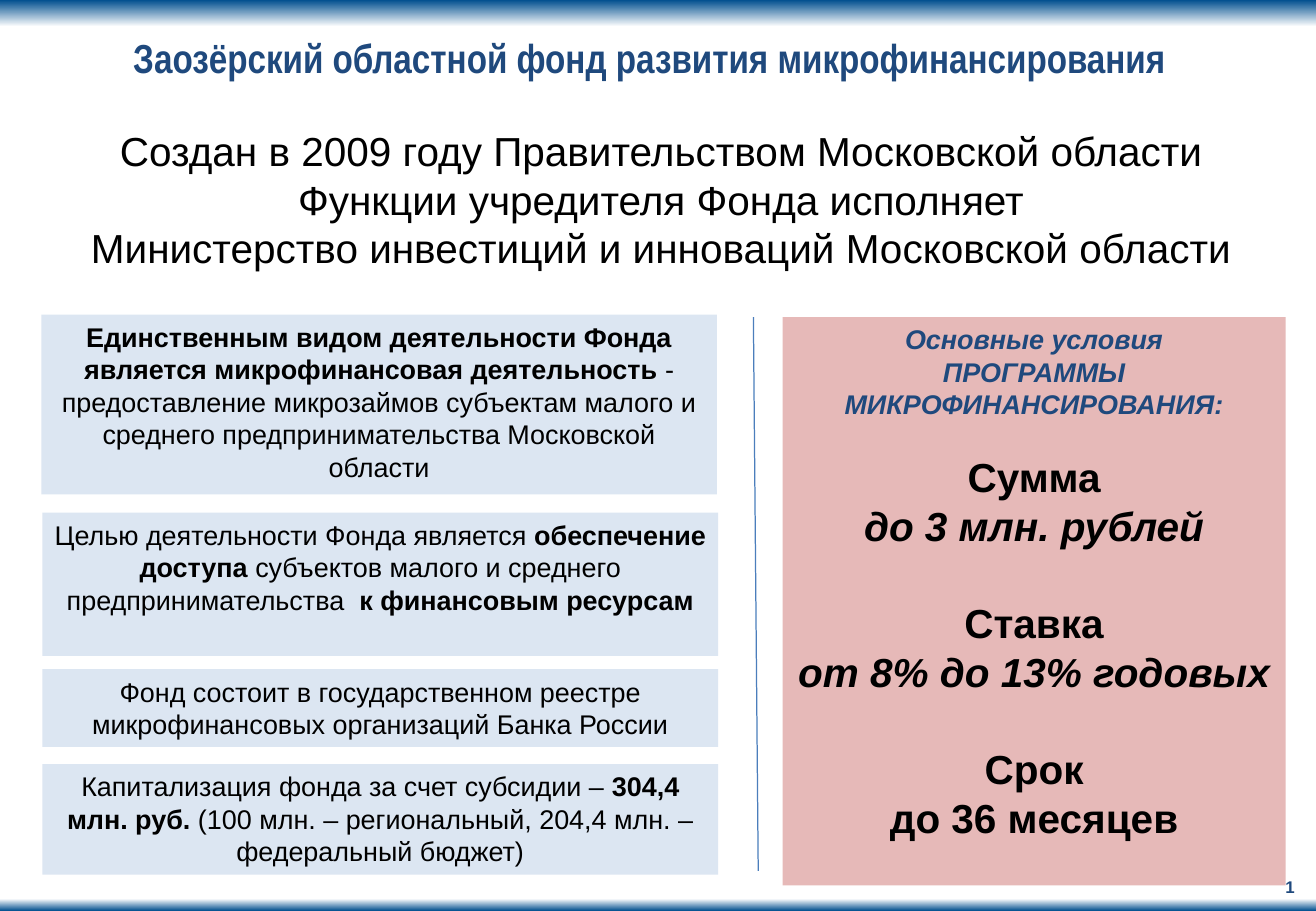
"""Build the slide about the regional microfinance fund."""
from lxml import etree
from pptx import Presentation
from pptx import util as u
from pptx.dml.color import RGBColor
from pptx.enum import shapes, text
from pptx.oxml.ns import qn

PX = 9144
WIDTH, HEIGHT = 1083, 750
NAVY, BLACK, DEEP, WHITE = "1F497D", "000000", "004E8E", "FFFFFF"
PALE, ROSE, RULE = "DCE6F2", "E6B9B8", "4B7EBC"

TITLE = "Заозёрский областной фонд развития микрофинансирования"
FOUNDING = [
    "Создан в 2009 году Правительством Московской области",
    "Функции учредителя Фонда исполняет",
    "Министерство инвестиций и инноваций Московской области",
]
FACTS = [
    ((34, 259, 556, 148), [
        ("Единственным видом деятельности Фонда является микрофинансовая деятельность ", "b"),
        ("- предоставление микрозаймов субъектам малого и среднего предпринимательства Московской области", ""),
    ]),
    ((35, 422, 556, 118), [
        ("Целью деятельности Фонда является ", ""),
        ("обеспечение доступа ", "b"),
        ("субъектов малого и среднего предпринимательства  ", ""),
        ("к финансовым ресурсам", "b"),
    ]),
    ((35, 551, 556, 64), [
        ("Фонд состоит в государственном реестре микрофинансовых организаций Банка России", ""),
    ]),
    ((35, 629, 556, 91), [
        ("Капитализация фонда за счет субсидии – ", ""),
        ("304,4 млн. руб.", "b"),
        (" (100 млн. – региональный, 204,4 млн. –федеральный бюджет)", ""),
    ]),
]
PROGRAMME = ["Основные условия", "ПРОГРАММЫ МИКРОФИНАНСИРОВАНИЯ:"]
TERMS = [
    ("Сумма", "до 3 млн. рублей", "bi", 19),
    ("Ставка", "от 8% до 13% годовых", "bi", 29),
    ("Срок", "до 36 месяцев", "b", 29),
]
BANDS = [((0, 0, WIDTH, 22), DEEP, WHITE), ((0, 740, WIDTH, 10), WHITE, DEEP)]


def rgb(value):
    """Turn a hex string into a colour."""
    return RGBColor.from_string(value)


def emu(lengths):
    """Scale px lengths to EMU."""
    return [n * PX for n in lengths]


def style(run, size, colour, marks="", name="Arial"):
    """Format one run; marks holds b for bold and i for italic."""
    font = run.font
    font.name, font.size, font.color.rgb = name, u.Pt(size), rgb(colour)
    font.bold, font.italic = "b" in marks, "i" in marks


def write(frame, lines, align=text.PP_ALIGN.CENTER):
    """Fill a frame with lines of (runs, size, colour, space before)."""
    frame.word_wrap = True
    frame.vertical_anchor = text.MSO_ANCHOR.TOP
    for index, (runs, size, colour, before) in enumerate(lines):
        paragraph = frame.add_paragraph() if index else frame.paragraphs[0]
        paragraph.alignment = align
        if before:
            paragraph.space_before = u.Pt(before)
        for words, marks in runs:
            run = paragraph.add_run()
            run.text = words
            style(run, size, colour, marks)


def rectangle(slide, box):
    """Add a rectangle without outline or shadow."""
    shape = slide.shapes.add_shape(shapes.MSO_SHAPE.RECTANGLE, *emu(box))
    shape.shadow.inherit = False
    shape.line.fill.background()
    return shape


def panel(slide, box, colour, lines):
    """Add a filled rectangle with text."""
    shape = rectangle(slide, box)
    shape.fill.solid()
    shape.fill.fore_color.rgb = rgb(colour)
    write(shape.text_frame, lines)


def main():
    """Build and save the slide."""
    deck = Presentation()
    deck.slide_width, deck.slide_height = emu((WIDTH, HEIGHT))
    slide = deck.slides.add_slide(deck.slide_layouts[5])

    for box, upper, lower in BANDS:
        fill = rectangle(slide, box).fill
        fill.gradient()
        fill.gradient_angle = 270
        for stop, colour, position in zip(fill.gradient_stops, (upper, lower), (0, 1)):
            stop.color.rgb = rgb(colour)
            stop.position = position

    title = slide.shapes.title
    title.left, title.top, title.width, title.height = emu((29, 27, 1011, 40))
    frame = title.text_frame
    frame.text = TITLE
    frame.margin_left = frame.margin_right = frame.margin_top = frame.margin_bottom = 0
    frame.paragraphs[0].alignment = text.PP_ALIGN.CENTER
    style(frame.paragraphs[0].runs[0], 24, NAVY, "b", "Arial Narrow")

    founding = slide.shapes.add_textbox(*emu((38, 99, 1012, 131)))
    write(founding.text_frame, [([(line, "")], 24, BLACK, 0) for line in FOUNDING])

    conditions = [([(line, "bi")], 16, NAVY, 0) for line in PROGRAMME]
    for term, value, marks, gap in TERMS:
        conditions += [([(term, "b")], 24, BLACK, gap), ([(value, marks)], 24, BLACK, 0)]
    panel(slide, (644, 261, 414, 468), ROSE, conditions)

    divider = slide.shapes.add_connector(
        shapes.MSO_CONNECTOR.STRAIGHT, *emu((620, 261, 624, 717)))
    divider.line.color.rgb = rgb(RULE)
    divider.line.width = u.Pt(0.75)
    etree.SubElement(divider.line._ln.getparent(), qn("a:effectLst"))

    number = slide.shapes.add_textbox(*emu((1048, 717, 28, 27)))
    write(number.text_frame, [([("1", "b")], 10, NAVY, 0)], text.PP_ALIGN.LEFT)
    number.text_frame.word_wrap = False

    for box, runs in FACTS:
        panel(slide, box, PALE, [(runs, 16, BLACK, 0)])

    deck.save("out.pptx")


if __name__ == "__main__":
    main()
